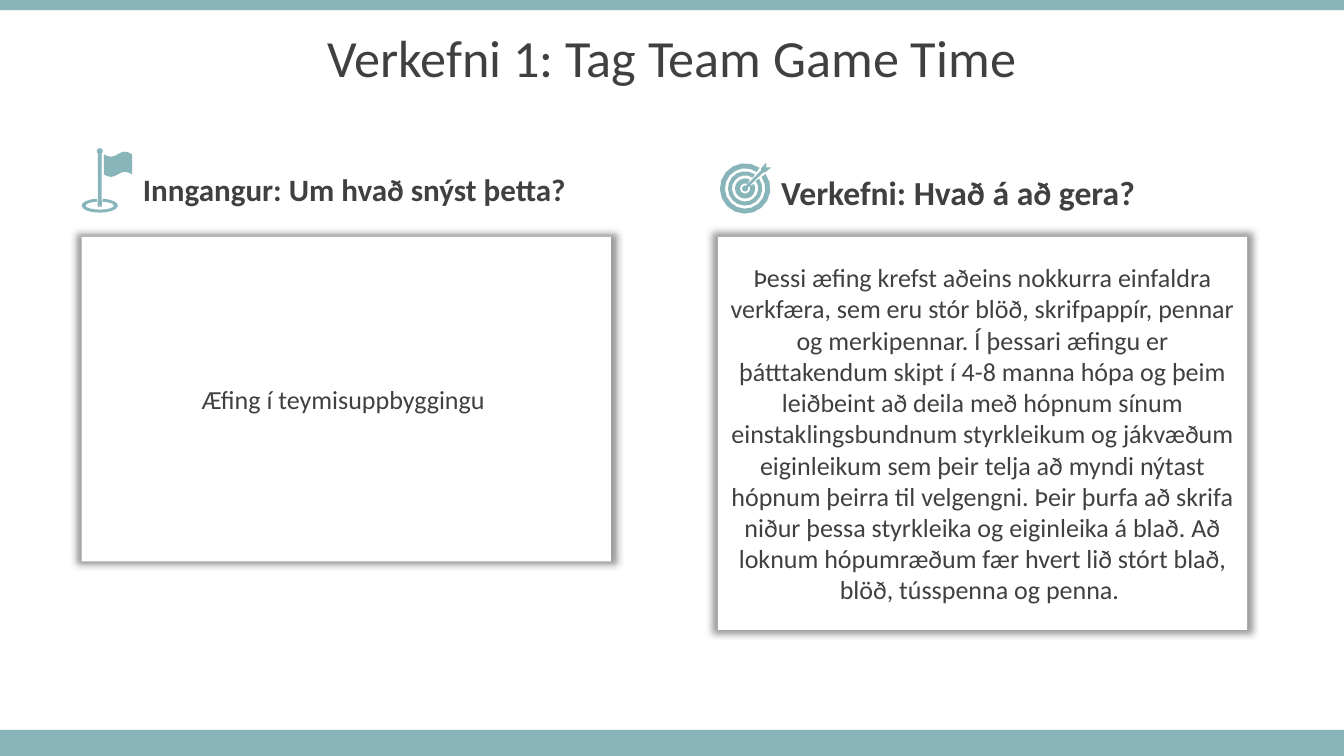
from math import cos, pi, radians, sin

from lxml import etree
from pptx import Presentation
from pptx.dml.color import RGBColor
from pptx.enum.shapes import MSO_SHAPE
from pptx.enum.text import MSO_ANCHOR, PP_ALIGN
from pptx.oxml.ns import qn
from pptx.util import Inches, Pt

RECT = MSO_SHAPE.RECTANGLE
MIDDLE = MSO_ANCHOR.MIDDLE
LEFT, CENTER = PP_ALIGN.LEFT, PP_ALIGN.CENTER
TEAL, WHITE, DARK = "87B5BA", "FFFFFF", "404040"
FONT = "Calibri"
SLIDE_W, SLIDE_H = 13.33, 7.5
CARD_TOP, CARD_W = 2.35, 5.25
HEADING_TOP, HEADING_W, HEADING_H = 1.7, 4.74, 0.41

INTRO = "Æfing í teymisuppbyggingu "
TASK = (
    "Þessi æfing krefst aðeins nokkurra einfaldra verkfæra, sem eru stór blöð, "
    "skrifpappír, pennar og merkipennar. Í þessari æfingu er þátttakendum skipt í "
    "4-8 manna hópa og þeim leiðbeint að deila með hópnum sínum einstaklingsbundnum "
    "styrkleikum og jákvæðum eiginleikum sem þeir telja að myndi nýtast hópnum þeirra "
    "til velgengni. Þeir þurfa að skrifa niður þessa styrkleika og eiginleika á blað. "
    "Að loknum hópumræðum fær hvert lið stórt blað, blöð, tússpenna og penna. "
)


def rgb(value):
    return RGBColor.from_string(value)


def paint(sp, color):
    sp.shadow.inherit = False
    sp.fill.solid()
    sp.fill.fore_color.rgb = rgb(color)
    sp.line.fill.background()


def add_rect(slide, left, top, width, height, color):
    sp = slide.shapes.add_shape(RECT, Inches(left), Inches(top), Inches(width), Inches(height))
    paint(sp, color)
    return sp


def add_glow(sp):
    """Put a soft, centred shadow round the shape."""
    effects = sp._element.spPr.find(qn("a:effectLst"))
    shadow = etree.SubElement(effects, qn("a:outerShdw"), blurRad=str(Pt(5)), dist="0",
                              sx="102000", sy="102000", algn="ctr", rotWithShape="0")
    color = etree.SubElement(shadow, qn("a:srgbClr"), val="000000")
    etree.SubElement(color, qn("a:alpha"), val="40000")


def write(sp, text, size, bold=False, align=LEFT, spacing=None, before=0):
    tf = sp.text_frame
    tf.word_wrap = True
    tf.vertical_anchor = MIDDLE
    p = tf.paragraphs[0]
    p.alignment = align
    p.space_before = Pt(before)
    if spacing:
        p.line_spacing = spacing
    r = p.add_run()
    r.text = text
    r.font.name = FONT
    r.font.size = Pt(size)
    r.font.bold = bold
    r.font.color.rgb = rgb(DARK)


def add_text(slide, left, top, width, height, text, size, **style):
    sp = slide.shapes.add_textbox(Inches(left), Inches(top), Inches(width), Inches(height))
    write(sp, text, size, **style)


def arc(cx, cy, rx, ry, start, end, steps):
    """Points of an elliptical arc, in degrees counterclockwise."""
    angles = [radians(start + (end - start) * i / steps) for i in range(steps + 1)]
    return [(cx + rx * cos(a), cy - ry * sin(a)) for a in angles]


def open_ring(cx, cy, outer, inner, middle, half_gap):
    """Outline of a ring with a gap centred on the angle middle."""
    start, end = middle + half_gap, middle + 360 - half_gap
    return arc(cx, cy, *outer, start, end, 16) + arc(cx, cy, *inner, end, start, 16)


def add_outlines(slide, left, top, outlines):
    """Draw closed outlines, given in inches from left and top, as one shape."""
    placed = [[(Inches(left + x), Inches(top + y)) for x, y in o] for o in outlines]
    builder = slide.shapes.build_freeform(*placed[0][0])
    builder.add_line_segments(placed[0][1:], close=True)
    for outline in placed[1:]:
        builder.move_to(*outline[0])
        builder.add_line_segments(outline[1:], close=True)
    paint(builder.convert_to_shape(), TEAL)


def flag_icon(slide, left):
    base = open_ring(0.18, 0.57, (0.18, 0.07), (0.14, 0.04), 90, 10)
    pole = arc(0.18, 0.03, 0.03, 0.03, -55, 235, 8) + [(0.16, 0.58), (0.2, 0.58)]
    wave = [(0.22 + 0.28 * i / 8, 0.06 + 0.025 * sin(2 * pi * i / 8)) for i in range(9)]
    cloth = wave + [(x, y + 0.2) for x, y in reversed(wave)]
    add_outlines(slide, left, 1.47, [base, pole, cloth])


def target_icon(slide, left):
    cx, cy = 0.25, 0.26
    rings = [open_ring(cx, cy, (outer, outer), (inner, inner), 45, half_gap)
             for outer, inner, half_gap in [(0.1, 0.05, 18), (0.17, 0.13, 10), (0.25, 0.2, 10)]]
    dart = [(0.46, 0), (0.46, 0.05), (0.51, 0.05), (0.45, 0.1), (0.43, 0.1)]
    dart += arc(cx, cy, 0.03, 0.03, 20, -290, 8)
    dart += [(0.41, 0.08), (0.41, 0.06)]
    add_outlines(slide, left, 1.61, rings + [dart])


def add_section(slide, left, height, body, icon, icon_left, heading, size, **style):
    """Icon and heading above a card of the given height."""
    card = add_rect(slide, left, CARD_TOP, CARD_W, height, WHITE)
    add_glow(card)
    tf = card.text_frame
    tf.margin_left = tf.margin_right = Inches(0.12)
    tf.margin_top = tf.margin_bottom = Inches(0.07)
    write(card, body, 18.6, align=CENTER)
    icon(slide, icon_left)
    add_text(slide, icon_left + 0.51, HEADING_TOP, HEADING_W, HEADING_H,
             heading, size, bold=True, **style)


def add_frame(slide):
    """Bands at both edges and the title."""
    add_rect(slide, 0, 7.24, SLIDE_W, 0.26, TEAL)
    add_rect(slide, 0, 0, SLIDE_W, 0.1, TEAL)
    add_text(slide, 0, 0.18, SLIDE_W, 0.84, "Verkefni 1: Tag Team Game Time", 37.3,
             align=CENTER, spacing=0.9, before=10)


def main():
    prs = Presentation()
    prs.slide_width, prs.slide_height = Inches(SLIDE_W), Inches(SLIDE_H)
    slide = prs.slides.add_slide(prs.slide_layouts[6])
    add_frame(slide)
    add_section(slide, 0.81, 3.22, INTRO, flag_icon, 0.81,
                "Inngangur: Um hvað snýst þetta?", 22.2, spacing=0.8, before=10)
    add_section(slide, 7.12, 3.9, TASK, target_icon, 7.14,
                "Verkefni: Hvað á að gera?", 24, before=4.8)
    prs.save("out.pptx")


if __name__ == "__main__":
    main()
